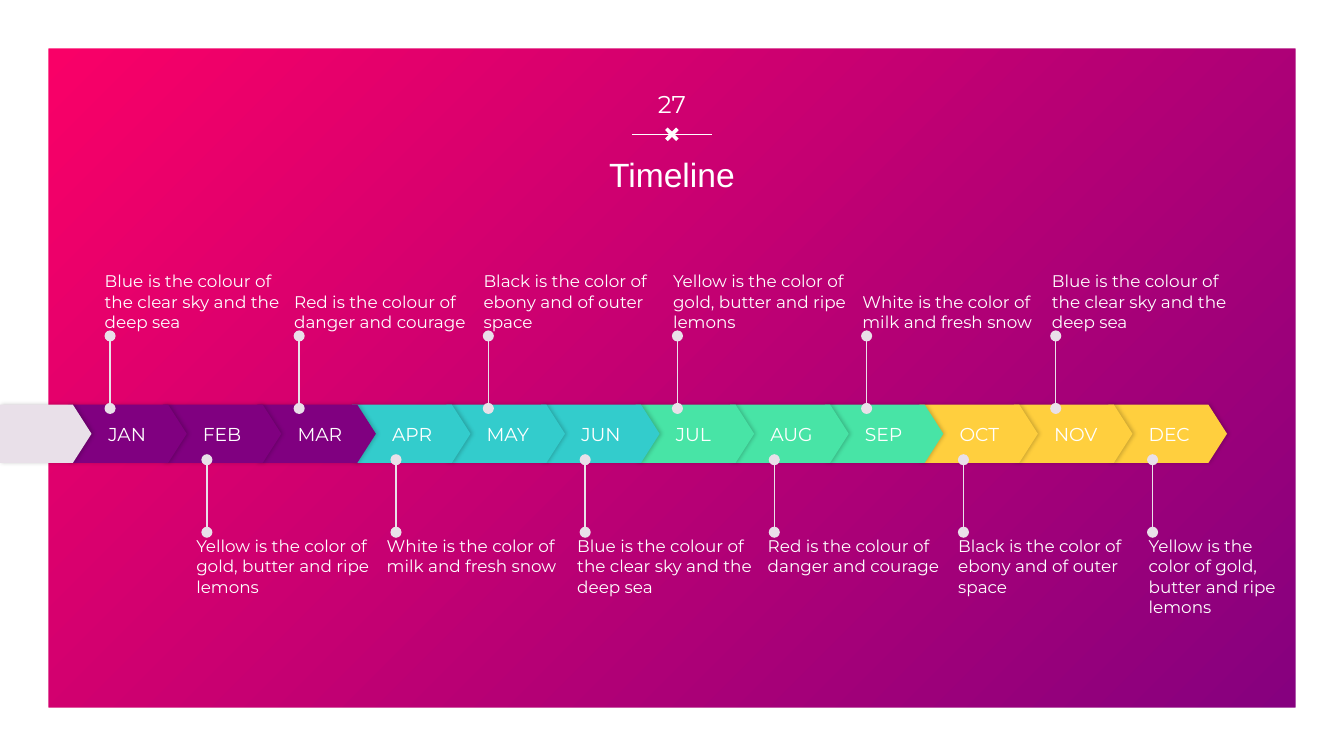
import pptx
import pptx.util
import pptx.dml.color
import pptx.enum.shapes
import pptx.enum.text
import pptx.oxml
import pptx.oxml.ns

Cm, Pt = pptx.util.Cm, pptx.util.Pt
RGBColor = pptx.dml.color.RGBColor
SHAPE = pptx.enum.shapes.MSO_SHAPE
ANCHOR = pptx.enum.text.MSO_ANCHOR
ALIGN = pptx.enum.text.PP_ALIGN

# Content
TITLE = "Timeline"
PAGE_NUMBER = "27"
WHITE = RGBColor(0xFF, 0xFF, 0xFF)
PALE = RGBColor(0xE9, 0xE0, 0xE9)
PINK = RGBColor(0xFF, 0x00, 0x66)
PURPLE = RGBColor(0x80, 0x00, 0x80)
TEAL = RGBColor(0x33, 0xCC, 0xCC)
GREEN = RGBColor(0x48, 0xE4, 0xA6)
YELLOW = RGBColor(0xFF, 0xCF, 0x3E)

QUARTERS = [
    (PURPLE, ("JAN", "FEB", "MAR")),
    (TEAL, ("APR", "MAY", "JUN")),
    (GREEN, ("JUL", "AUG", "SEP")),
    (YELLOW, ("OCT", "NOV", "DEC")),
]
BLUE_NOTE = "Blue is the colour of the clear sky and the deep sea"
RED_NOTE = "Red is the colour of danger and courage"
BLACK_NOTE = "Black is the color of ebony and of outer space"
YELLOW_NOTE = "Yellow is the color of gold, butter and ripe lemons"
WHITE_NOTE = "White is the color of milk and fresh snow"
NOTES_ABOVE = [BLUE_NOTE, RED_NOTE, BLACK_NOTE, YELLOW_NOTE, WHITE_NOTE, BLUE_NOTE]
NOTES_BELOW = [YELLOW_NOTE, WHITE_NOTE, BLUE_NOTE, RED_NOTE, BLACK_NOTE, YELLOW_NOTE]

# Measures in centimetres
PAGE_WIDTH, PAGE_HEIGHT = 25.4, 14.29
BAR_TOP, BAR_HEIGHT = 7.65, 1.1
FIRST_MONTH, LAST_MONTH, MONTH_WIDTH = 1.29, 20.95, 2.24
MONTH_STEP = (LAST_MONTH - FIRST_MONTH) / 11
NOTE_WIDTH, LAST_NOTE_WIDTH, NOTE_HEIGHT = 3.38, 2.79, 1.47
# notes, first pin, pin start, pin end, first note, note step, note top, anchor
ROWS = [
    (NOTES_ABOVE, 2.08, 7.72, 6.35, 1.98, 3.58, 4.8, ANCHOR.BOTTOM),
    (NOTES_BELOW, 3.91, 10.06, 8.69, 3.71, 3.6, 10.13, ANCHOR.TOP),
]


def add_effects(properties, content=""):
    properties.append(pptx.oxml.parse_xml(
        f'<a:effectLst {pptx.oxml.ns.nsdecls("a")}>{content}</a:effectLst>'))


def write(box, text, size, font="Montserrat", anchor=ANCHOR.MIDDLE,
          align=ALIGN.LEFT, margins=(0, 0, 0, 0)):
    frame = box.text_frame
    frame.text = text
    frame.word_wrap = True
    frame.vertical_anchor = anchor
    (frame.margin_left, frame.margin_top,
     frame.margin_right, frame.margin_bottom) = map(Cm, margins)
    para = frame.paragraphs[0]
    para.alignment = align
    for span in para.runs:
        span.font.size = Pt(size)
        span.font.name = font
        span.font.color.rgb = WHITE


def add_text(page, left, top, width, height, text, size, **style):
    box = page.shapes.add_textbox(Cm(left), Cm(top), Cm(width), Cm(height))
    write(box, text, size, **style)


def add_block(page, kind, left, top, width, height, adjustment, color):
    block = page.shapes.add_shape(kind, Cm(left), Cm(top), Cm(width), Cm(height))
    block.adjustments[0] = adjustment
    block.fill.solid()
    block.fill.fore_color.rgb = color
    block.line.fill.background()
    block.shadow.inherit = False
    return block


def add_arrow_block(page, left, width, color):
    block = add_block(page, SHAPE.PENTAGON, left, BAR_TOP, width, BAR_HEIGHT, 0.32, color)
    properties = block._element.spPr
    properties.remove(properties.find(pptx.oxml.ns.qn("a:effectLst")))
    add_effects(properties,
                f'<a:outerShdw blurRad="{Pt(2.2)}" dist="{Pt(0.8)}" dir="0" algn="l" '
                'rotWithShape="0"><a:srgbClr val="000000"><a:alpha val="20000"/>'
                '</a:srgbClr></a:outerShdw>')
    return block


def add_line(page, x1, y1, x2, y2, color, dotted=False):
    line = page.shapes.add_connector(
        pptx.enum.shapes.MSO_CONNECTOR.STRAIGHT, Cm(x1), Cm(y1), Cm(x2), Cm(y2))
    line.line.color.rgb = color
    line.line.width = Pt(0.75)
    if dotted:
        for end in ("headEnd", "tailEnd"):
            line.line._get_or_add_ln().append(pptx.oxml.parse_xml(
                f'<a:{end} {pptx.oxml.ns.nsdecls("a")} type="oval"/>'))
    add_effects(line._element.spPr)


def main():
    deck = pptx.Presentation()
    deck.slide_width, deck.slide_height = Cm(PAGE_WIDTH), Cm(PAGE_HEIGHT)
    page = deck.slides.add_slide(deck.slide_layouts[6])

    # Background and white frame
    fill = page.background.fill
    fill.gradient()
    fill.gradient_angle = 315
    for stop, color in zip(fill.gradient_stops, (PINK, PURPLE)):
        stop.color.rgb = color
    add_block(page, SHAPE.FRAME, 0, 0, PAGE_WIDTH, PAGE_HEIGHT, 0.064, WHITE)

    # Heading
    middle = PAGE_WIDTH / 2
    add_line(page, middle - 0.76, 2.54, middle + 0.76, 2.54, WHITE)
    add_block(page, SHAPE.MATH_MULTIPLY, middle - 0.2, 2.34, 0.4, 0.4, 0.174, WHITE)
    heading = dict(align=ALIGN.CENTER, margins=(0.25, 0.25, 0.25, 0.25))
    add_text(page, 0.91, 2.75, 23.58, 1.1, TITLE, 18, font="Arial", **heading)
    add_text(page, middle - 0.76, 1.42, 1.52, 1.1, PAGE_NUMBER, 13, **heading)

    # Months, last one first so that each overlaps the next
    months = [(name, color) for color, names in QUARTERS for name in names]
    for index, (name, color) in reversed(list(enumerate(months))):
        block = add_arrow_block(page, FIRST_MONTH + index * MONTH_STEP, MONTH_WIDTH, color)
        write(block, name, 10, margins=(0.76, 0, 0, 0))
    add_arrow_block(page, 0, 1.73, PALE)

    # Pins and notes, every second month
    for notes, first_pin, start, end, first_note, step, top, anchor in ROWS:
        for index, note in enumerate(notes):
            pin = first_pin + index * 2 * MONTH_STEP
            add_line(page, pin, start, pin, end, PALE, dotted=True)
            at_edge = notes is NOTES_BELOW and index == len(notes) - 1
            add_text(page, first_note + index * step, top,
                     LAST_NOTE_WIDTH if at_edge else NOTE_WIDTH, NOTE_HEIGHT,
                     note, 9, anchor=anchor)

    deck.save("out.pptx")


if __name__ == "__main__":
    main()
